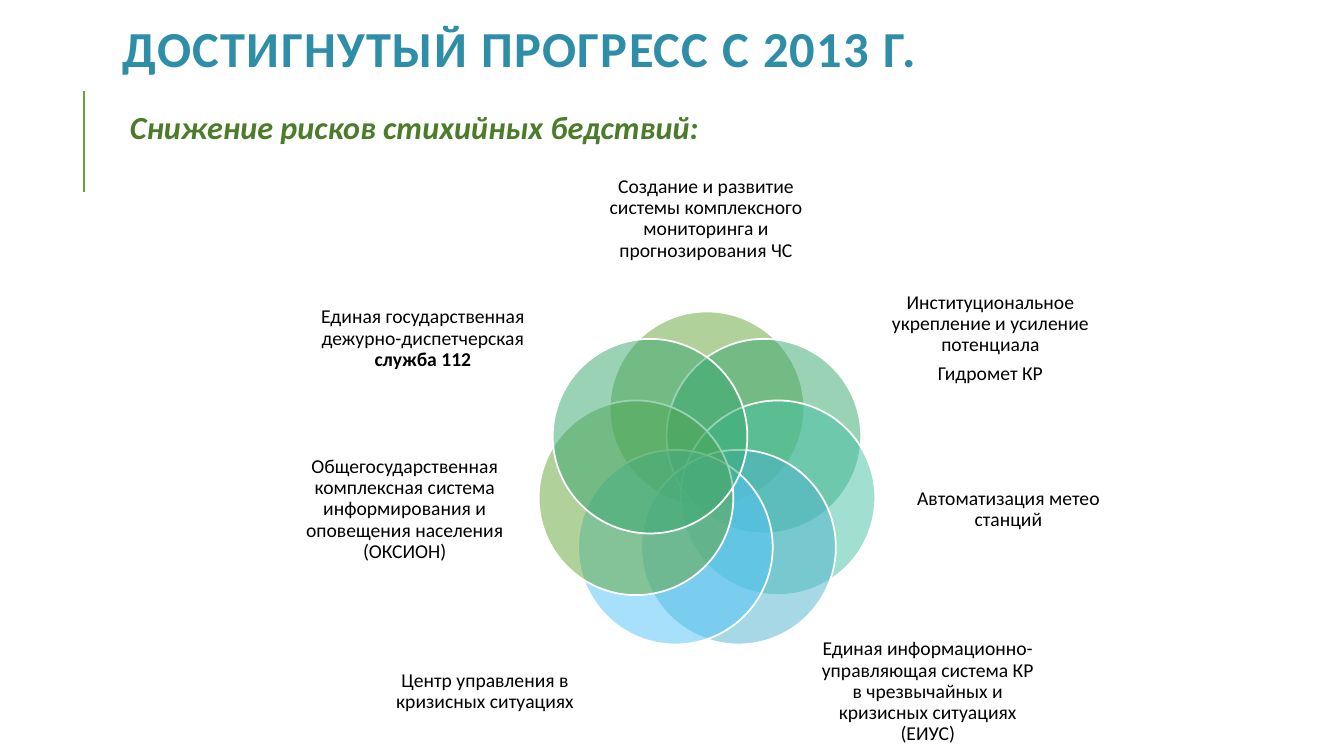
from dataclasses import dataclass
from math import cos, pi, sin

from lxml import etree
from pptx import Presentation
from pptx.dml.color import RGBColor
from pptx.enum.shapes import MSO_CONNECTOR, MSO_SHAPE
from pptx.enum.text import MSO_ANCHOR, MSO_AUTO_SIZE, PP_ALIGN
from pptx.oxml.ns import qn
from pptx.util import Pt

LINE = MSO_CONNECTOR.STRAIGHT
OVAL = MSO_SHAPE.OVAL
MIDDLE = MSO_ANCHOR.MIDDLE
FIXED = MSO_AUTO_SIZE.NONE
LEFT, CENTER = PP_ALIGN.LEFT, PP_ALIGN.CENTER


@dataclass(frozen=True)
class Theme:
    font: str = "Calibri"
    head: str = "2E8EA8"
    sub: str = "4A7C29"
    ink: str = "000000"
    paper: str = "FFFFFF"
    rule: str = "63A537"
    petals: tuple = ("63A537", "37A76F", "44C1A3", "4EB3CF",
                     "51C3F9", "63A537", "37A76F")
    head_size: float = 36
    sub_size: float = 23
    text_size: float = 14


THEME = Theme()
HUB = (505, 344)
ORBIT = 52
SIZE = 139

LABELS = (
    ((424.8, 113.8, 159, 85),
     [["Создание и развитие системы комплексного мониторинга и прогнозирования ЧС"]]),
    ((632.2, 195, 150.5, 93.6),
     [["Институциональное укрепление и усиление потенциала"], ["Гидромет КР"]]),
    ((646.5, 314, 147.6, 100), [["Автоматизация метео станций"]]),
    ((583.2, 448.6, 159, 91.4),
     [["Единая информационно-управляющая система КР в чрезвычайных "
       "и кризисных ситуациях (ЕИУС)"]]),
    ((267, 448.6, 159, 91.4), [["Центр управления в кризисных ситуациях"]]),
    ((215.3, 314, 147.6, 100),
     [["Общегосударственная комплексная система информирования "
       "и оповещения населения (ОКСИОН)"]]),
    ((214.6, 179.3, 175, 125.3),
     [["Единая государственная дежурно-диспетчерская ", "служба 112"]]),
)


def rgb(code):
    return RGBColor.from_string(code)


def place(shape, box):
    shape.left, shape.top, shape.width, shape.height = map(Pt, box)


def write(shape, paras, size=THEME.text_size, color=THEME.ink, bold=False,
          italic=False, align=CENTER, lead=0.9, after=5, pad=(0, 0), track=0):
    frame = shape.text_frame
    frame.word_wrap = True
    frame.auto_size = FIXED
    frame.vertical_anchor = MIDDLE
    frame.margin_left = frame.margin_right = Pt(pad[0])
    frame.margin_top = frame.margin_bottom = Pt(pad[1])
    for i, parts in enumerate(paras):
        para = frame.add_paragraph() if i else frame.paragraphs[0]
        para.alignment = align
        para.line_spacing = lead
        para.space_before, para.space_after = Pt(0), Pt(after)
        for j, part in enumerate(parts):
            run = para.add_run()
            run.text = part
            font = run.font
            font.name, font.size = THEME.font, Pt(size)
            font.color.rgb = rgb(color)
            font.bold, font.italic = bold or j > 0, italic
            if track:
                font._element.set("spc", str(track * 100))


def add_title(slide, text):
    title = slide.shapes.title
    place(title, (80.6, 10.8, 810, 54.7))
    write(title, [[text]], size=THEME.head_size, color=THEME.head, bold=True,
          align=LEFT, lead=0.8, after=0, pad=(7.2, 3.6), track=1)


def add_body(slide, text):
    body = slide.placeholders[1]
    place(body, (82, 71.3, 836, 42.5))
    body.fill.solid()
    body.fill.fore_color.rgb = rgb(THEME.paper)
    write(body, [[text]], size=THEME.sub_size, color=THEME.sub, bold=True,
          italic=True, align=LEFT, after=0, pad=(10.8, 3.6))
    props = body.text_frame.paragraphs[0]._p.get_or_add_pPr()
    props.set("marL", "0")
    props.set("indent", "0")
    etree.SubElement(props, qn("a:buNone"))


def add_rule(slide):
    rule = slide.shapes.add_connector(LINE, Pt(60), Pt(137), Pt(60), Pt(65))
    rule.line.color.rgb = rgb(THEME.rule)
    rule.line.width = Pt(1.5)
    etree.SubElement(rule._element.spPr, qn("a:effectLst"))


def add_petal(slide, turn, color):
    x = HUB[0] + ORBIT * sin(turn) - SIZE / 2
    y = HUB[1] - ORBIT * cos(turn) - SIZE / 2
    petal = slide.shapes.add_shape(OVAL, Pt(x), Pt(y), Pt(SIZE), Pt(SIZE))
    petal.shadow.inherit = False
    petal.fill.solid()
    petal.fill.fore_color.rgb = rgb(color)
    tint = petal._element.spPr.find(qn("a:solidFill"))[0]
    etree.SubElement(tint, qn("a:alpha"), val="50000")
    petal.line.color.rgb = rgb(THEME.paper)
    petal.line.width = Pt(1.25)


def add_label(slide, box, paras):
    write(slide.shapes.add_textbox(*map(Pt, box)), paras)


def main():
    deck = Presentation()
    deck.slide_width, deck.slide_height = Pt(960), Pt(540)
    slide = deck.slides.add_slide(deck.slide_layouts[1])
    add_rule(slide)
    add_body(slide, "Снижение рисков стихийных бедствий:")
    add_title(slide, "ДОСТИГНУТЫЙ ПРОГРЕСС С 2013 Г.")
    for i, (color, (box, paras)) in enumerate(zip(THEME.petals, LABELS)):
        add_petal(slide, 2 * pi * i / len(LABELS), color)
        add_label(slide, box, paras)
    deck.save("out.pptx")


if __name__ == "__main__":
    main()
